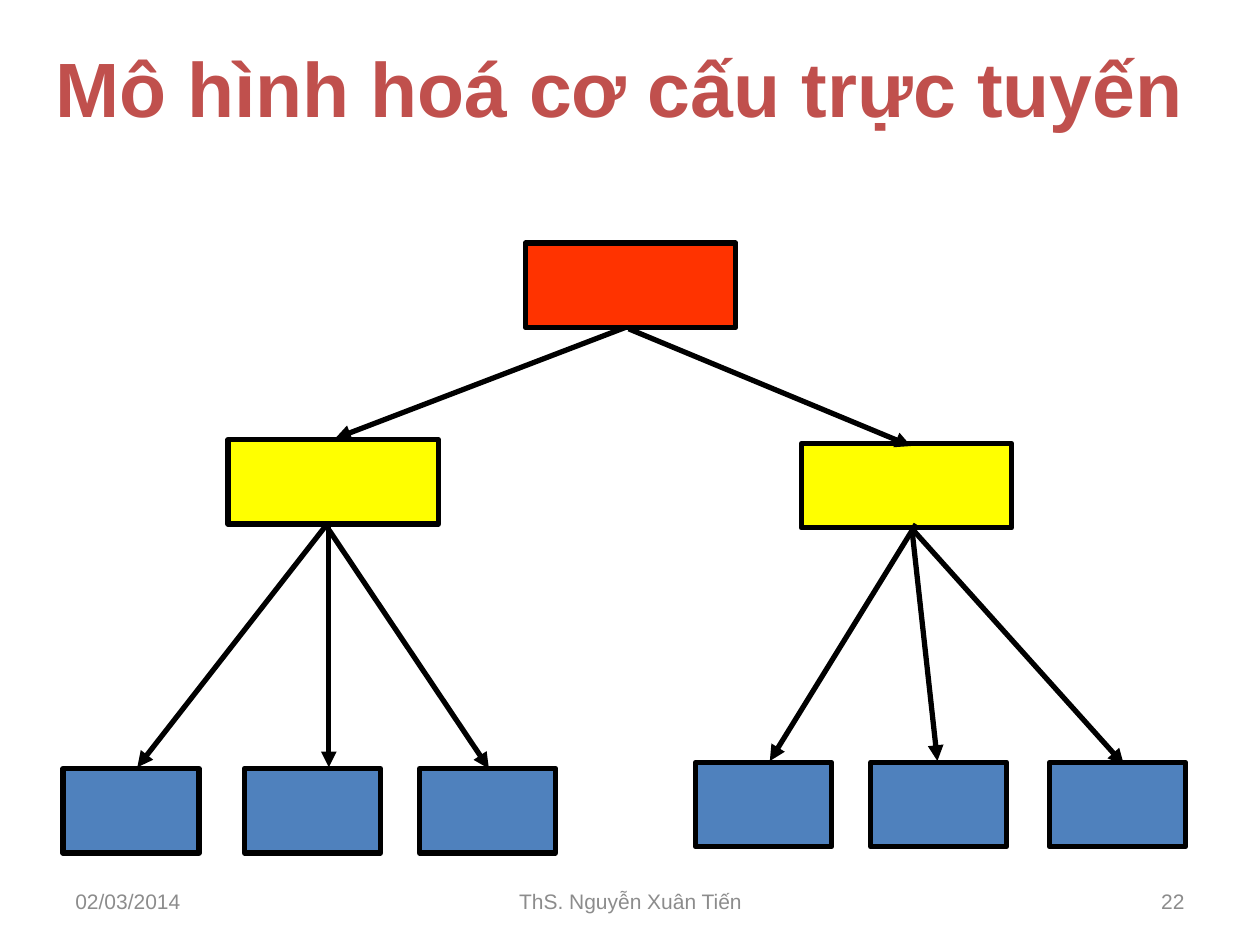
"""Build a slide with a line-structure organisation chart."""
from lxml import etree
from pptx import Presentation
from pptx import util as u
from pptx.dml.color import RGBColor
from pptx.enum import shapes, text
from pptx.oxml.ns import qn

COLORS = {"title": "C0504D", "footer": "8C8C8C", "line": "000000",
          "top": "FF3300", "middle": "FFFF00", "unit": "4F81BD"}
rgb = {name: RGBColor.from_string(value) for name, value in COLORS.items()}

prs = Presentation()
prs.slide_width, prs.slide_height = u.Inches(10), u.Inches(7.5)
col, row = prs.slide_width / 10, prs.slide_height / 7.5
s = prs.slides.add_slide(prs.slide_layouts[6])


def grid(x, y):
    return int(x * col), int(y * row)


def add_label(words, x, y, w, h, align, size, color, bold=False):
    tf = s.shapes.add_textbox(*grid(x, y), *grid(w, h)).text_frame
    tf.word_wrap = True
    tf.vertical_anchor = text.MSO_ANCHOR.MIDDLE
    p = tf.paragraphs[0]
    p.text = words
    p.alignment = align
    r = p.runs[0]
    r.font.name, r.font.size, r.font.bold = "Arial", u.Pt(size), bold
    r.font.color.rgb = rgb[color]


AL = text.PP_ALIGN
for words, x, w, align in [("02/03/2014", 0.5, 2.33, AL.LEFT),
                           ("ThS. Nguyễn Xuân Tiến", 3.42, 3.17, AL.CENTER),
                           ("22", 7.17, 2.33, AL.RIGHT)]:
    add_label(words, x, 6.95, w, 0.4, align, 12, "footer")
add_label("Mô hình hoá cơ cấu trực tuyến", 0.24, 0.28, 9.36, 0.81,
          AL.CENTER, 44, "title", True)

widths = {"top": 1.67, "middle": 1.67, "unit": 1.08}
boxes = [("top", 4.17, 1.93), ("middle", 1.81, 3.49), ("middle", 6.36, 3.52)]
boxes += [("unit", x, 6.1) for x in (0.5, 1.94, 3.33)]
boxes += [("unit", x, 6.05) for x in (5.52, 6.91, 8.33)]
for level, x, y in boxes:
    sp = s.shapes.add_shape(shapes.MSO_SHAPE.RECTANGLE, *grid(x, y), *grid(widths[level], 0.67))
    sp.shadow.inherit = False
    sp.fill.solid()
    sp.fill.fore_color.rgb = rgb[level]
    sp.line.color.rgb = rgb["line"]
    sp.line.width = u.Pt(3)

arrows = [((4.96, 2.6), (2.66, 3.48)), ((4.99, 2.61), (7.23, 3.54)),
          ((2.58, 4.18), (1.09, 6.09)), ((2.61, 4.17), (2.61, 6.09)),
          ((2.6, 4.19), (3.88, 6.1)), ((7.27, 4.16), (6.11, 6.04)),
          ((7.24, 4.22), (7.44, 6.04)), ((7.25, 4.21), (8.92, 6.07))]
for start, end in arrows:
    cx = s.shapes.add_connector(shapes.MSO_CONNECTOR.STRAIGHT, *grid(*start), *grid(*end))
    cx.line.color.rgb = rgb["line"]
    cx.line.width = u.Pt(3)
    etree.SubElement(cx.line._get_or_add_ln(), qn("a:tailEnd"), type="triangle")
    etree.SubElement(cx._element.spPr, qn("a:effectLst"))

prs.save("out.pptx")
